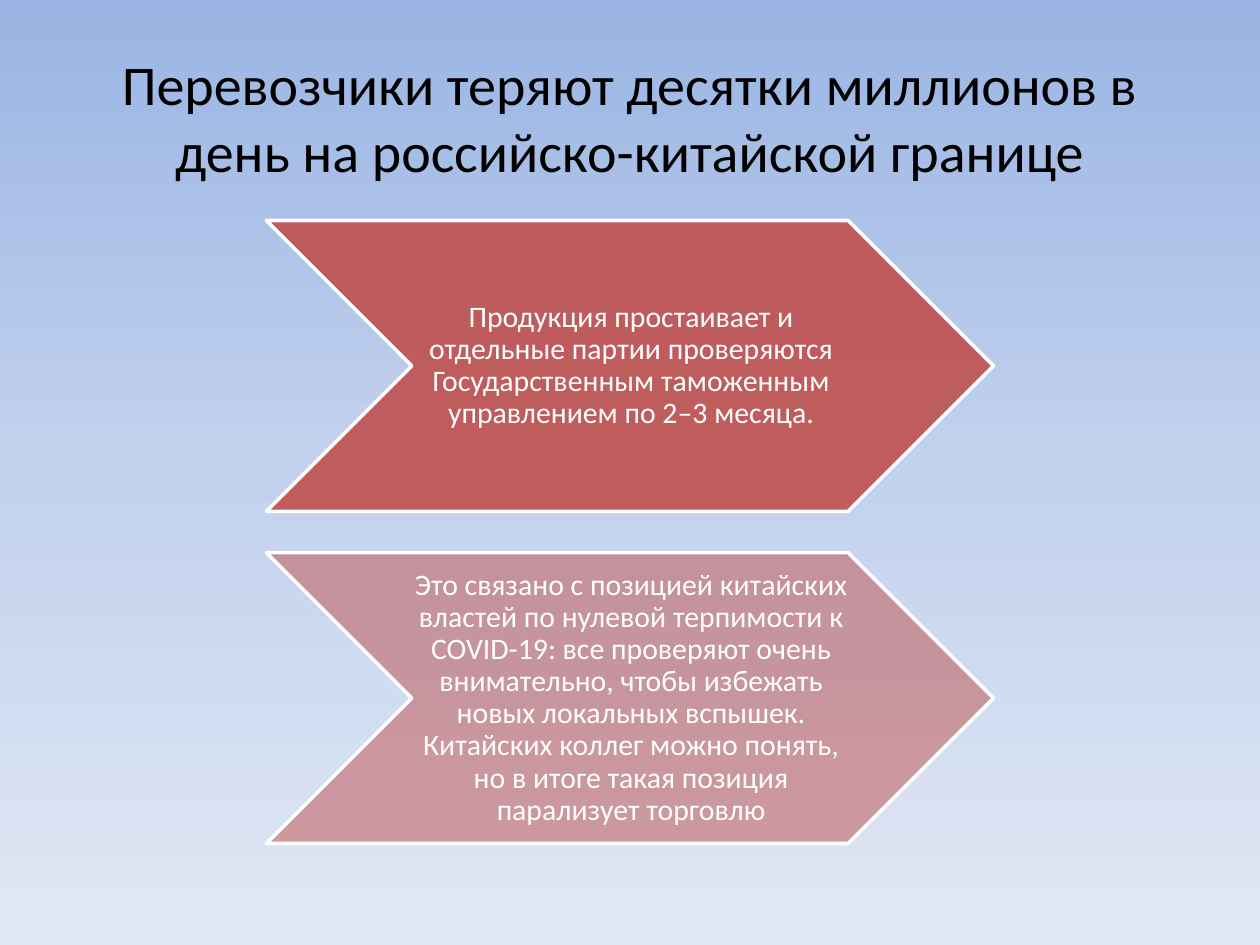
from copy import deepcopy

from pptx import Presentation
from pptx.dml.color import RGBColor
from pptx.enum.shapes import MSO_SHAPE
from pptx.enum.text import MSO_ANCHOR, MSO_AUTO_SIZE, PP_ALIGN
from pptx.oxml.ns import qn
from pptx.oxml.xmlchemy import OxmlElement
from pptx.util import Pt

COLORS = {
    "sky_top": "9AB5E4",
    "sky_middle": "C2D1ED",
    "sky_bottom": "E1E8F5",
    "title": "000000",
    "chevron": "C0504D",
    "white": "FFFFFF",
}
PAGE_WIDTH, PAGE_HEIGHT = 720, 540
CHEVRON_WIDTH, CHEVRON_HEIGHT = 415.5, 166.2
CHEVRON_TOP, CHEVRON_STEP = 126, 189.8

TITLE = "Перевозчики теряют десятки миллионов в день на российско-китайской границе"
REASONS = [
    ("Продукция простаивает и отдельные партии проверяются Государственным "
     "таможенным управлением по 2–3 месяца.", 90),
    ("Это связано с позицией китайских властей по нулевой терпимости к COVID-19: "
     "все проверяют очень внимательно, чтобы избежать новых локальных вспышек. "
     "Китайских коллег можно понять, но в итоге такая позиция парализует торговлю", 50),
]


def set_attributes(target, values):
    for name, value in values.items():
        setattr(target, name, value)


class SlideBuilder:
    """Holds the text style and the current slide."""

    font_name = "Calibri"

    def __init__(self, page):
        self.page = page

    def background(self, color_names):
        fill = self.page.background.fill
        fill.gradient()
        fill.gradient_angle = 270
        # Grow the two default stops to one stop per colour
        stop_list = self.page._element.find(".//" + qn("a:gsLst"))
        while len(stop_list) < len(color_names):
            stop_list.append(deepcopy(stop_list[0]))
        for index, (stop, name) in enumerate(zip(fill.gradient_stops, color_names)):
            stop.color.rgb = RGBColor.from_string(COLORS[name])
            stop.position = index / (len(color_names) - 1)

    def fill_text(self, shape, text, size, color, frame_format, para_format):
        frame = shape.text_frame
        set_attributes(frame, {"word_wrap": True, "auto_size": MSO_AUTO_SIZE.NONE,
                               "vertical_anchor": MSO_ANCHOR.MIDDLE, **frame_format})
        para = frame.paragraphs[0]
        set_attributes(para, {"alignment": PP_ALIGN.CENTER, **para_format})
        span = para.add_run()
        span.text = text
        set_attributes(span.font, {"name": self.font_name, "size": Pt(size)})
        span.font.color.rgb = RGBColor.from_string(COLORS[color])

    def title(self, text, left, top, width, height):
        box = self.page.shapes.title
        set_attributes(box, {"left": Pt(left), "top": Pt(top),
                             "width": Pt(width), "height": Pt(height)})
        self.fill_text(box, text, 32, "title", {}, {})

    def chevron(self, text, left, top, width, height, opacity):
        shape = self.page.shapes.add_shape(
            MSO_SHAPE.CHEVRON, Pt(left), Pt(top), Pt(width), Pt(height))
        shape.shadow.inherit = False
        shape.fill.solid()
        shape.fill.fore_color.rgb = RGBColor.from_string(COLORS["chevron"])
        alpha = OxmlElement("a:alpha")
        alpha.set("val", str(opacity * 1000))
        shape._element.spPr.find(qn("a:solidFill"))[0].append(alpha)
        shape.line.color.rgb = RGBColor.from_string(COLORS["white"])
        shape.line.width = Pt(2)
        margins = {"margin_left": Pt(1.4), "margin_top": Pt(0.7),
                   "margin_right": Pt(0), "margin_bottom": Pt(0.7)}
        self.fill_text(shape, text, 17, "white", margins, {"line_spacing": 0.9})


def main():
    deck = Presentation()
    deck.slide_width, deck.slide_height = Pt(PAGE_WIDTH), Pt(PAGE_HEIGHT)
    builder = SlideBuilder(deck.slides.add_slide(deck.slide_layouts[5]))

    # Background and title
    builder.background(["sky_top", "sky_middle", "sky_bottom"])
    builder.title(TITLE, 36, 21.6, 648, 90)

    # Centred column of chevrons
    left = (PAGE_WIDTH - CHEVRON_WIDTH) / 2
    for index, (text, opacity) in enumerate(REASONS):
        builder.chevron(text, left, CHEVRON_TOP + index * CHEVRON_STEP,
                        CHEVRON_WIDTH, CHEVRON_HEIGHT, opacity)

    deck.save("out.pptx")


if __name__ == "__main__":
    main()
